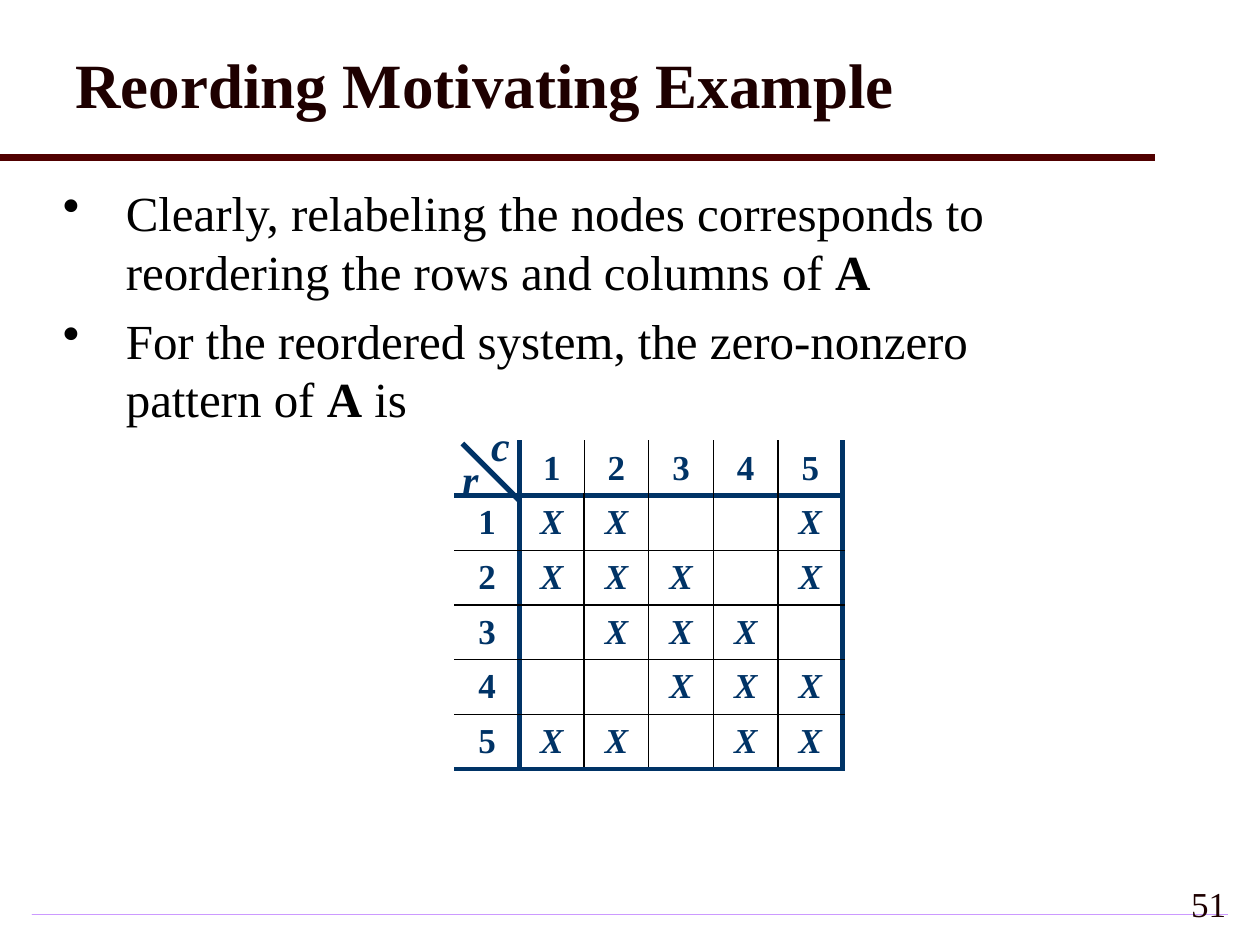
from lxml import etree
from pptx import Presentation, util as u
from pptx.dml.color import RGBColor
from pptx.enum import dml, shapes, text
from pptx.oxml.ns import qn

BLACK = RGBColor(0x00, 0x00, 0x00)
NAVY = RGBColor(0x00, 0x33, 0x66)
MAROON = RGBColor(0x50, 0x00, 0x00)
DARK = RGBColor(0x1E, 0x00, 0x00)
LILAC = RGBColor(0xCC, 0x99, 0xFF)
PALE = RGBColor(0xF3, 0xEB, 0xFF)

BULLETS = [
    [("Clearly, relabeling the nodes corresponds to reordering the rows and columns of ", False),
     ("A", True)],
    [("For the reordered system, the zero-nonzero pattern of ", False),
     ("A", True), (" is", False)],
]
PATTERN = ["XX..X", "XXX.X", ".XXX.", "..XXX", "XX.XX"]


class SlideBuilder:
    font = "Times New Roman"

    def __init__(self, slide):
        self.slide = slide

    def run(self, paragraph, words, size, color, bold=False, italic=False):
        run = paragraph.add_run()
        run.text = words
        font = run.font
        font.name, font.size = self.font, u.Pt(size)
        font.bold, font.italic = bold, italic
        font.color.rgb = color

    def frame(self, left, top, width, height, anchor=text.MSO_ANCHOR.TOP):
        box = self.slide.shapes.add_textbox(*map(u.Inches, (left, top, width, height)))
        frame = box.text_frame
        frame.word_wrap = True
        frame.vertical_anchor = anchor
        return frame

    def label(self, box, words, size, color, bold=False, italic=False,
              anchor=text.MSO_ANCHOR.TOP, align=text.PP_ALIGN.LEFT):
        paragraph = self.frame(*box, anchor).paragraphs[0]
        paragraph.alignment = align
        self.run(paragraph, words, size, color, bold, italic)

    def bullets(self, box, items, size, color):
        frame = self.frame(*box)
        for index, item in enumerate(items):
            paragraph = frame.add_paragraph() if index else frame.paragraphs[0]
            properties = paragraph._p.get_or_add_pPr()
            properties.set("marL", str(u.Inches(0.5)))
            properties.set("indent", str(-u.Inches(0.5)))
            etree.SubElement(properties, qn("a:buChar"), char="•")
            if index:
                paragraph.space_before = u.Pt(0.2 * size)
            for words, bold in item:
                self.run(paragraph, words, size, color, bold)

    def line(self, start, end, color, width):
        line = self.slide.shapes.add_connector(
            shapes.MSO_CONNECTOR.STRAIGHT, *map(u.Inches, start + end))
        line.line.color.rgb = color
        line.line.width = u.Pt(width)
        etree.SubElement(line._element.spPr, qn("a:effectLst"))

    def gradient_bar(self, box, first, last):
        bar = self.slide.shapes.add_shape(shapes.MSO_SHAPE.RECTANGLE, *map(u.Inches, box))
        bar.shadow.inherit = False
        bar.line.fill.background()
        bar.fill.gradient()
        for stop, color in zip(bar.fill.gradient_stops, (first, last)):
            stop.color.rgb = color
        # Shade from the centre outwards
        gradient = bar._element.spPr.find(qn("a:gradFill"))
        gradient.remove(gradient.find(qn("a:lin")))
        shade = etree.SubElement(gradient, qn("a:path"), path="shape")
        etree.SubElement(shade, qn("a:fillToRect"), l="50000", t="50000", r="50000", b="50000")

    def border(self, cell, side, color, width):
        properties = cell._tc.get_or_add_tcPr()
        edge = etree.Element(qn("a:ln" + side), w=str(u.Pt(width)))
        fill = etree.SubElement(edge, qn("a:solidFill"))
        etree.SubElement(fill, qn("a:srgbClr"), val=str(color))
        # Borders come before the cell fill
        properties.insert(len(properties) - 1, edge)

    def matrix(self, left, top, width, height, pattern):
        count = len(pattern) + 1
        table = self.slide.shapes.add_table(
            count, count, *map(u.Inches, (left, top, width, height))).table
        table.first_row = table.horz_banding = False
        numbers = "".join(str(number) for number in range(1, count))
        rows = ["." + numbers] + [n + marks for n, marks in zip(numbers, pattern)]
        heavy, outer = (0, count - 1), count - 1
        for i, row in enumerate(rows):
            for j, mark in enumerate(row):
                cell = table.cell(i, j)
                cell.fill.background()
                cell.vertical_anchor = text.MSO_ANCHOR.MIDDLE
                paragraph = cell.text_frame.paragraphs[0]
                paragraph.alignment = text.PP_ALIGN.CENTER
                paragraph.font.size = u.Pt(20)
                if mark != ".":
                    self.run(paragraph, mark, 20, NAVY, True, mark == "X")
                # Heavy rules close the header row, header column and matrix
                thin = (BLACK, 1 if i and j else 0.75)
                thick = (NAVY, 3)
                if j:
                    self.border(cell, "L", *(thick if j == 1 else thin))
                self.border(cell, "R", *(thick if j in heavy else thin))
                if i:
                    self.border(cell, "T", *(thick if i == 1 else thin))
                self.border(cell, "B", *(thick if i in (0, outer) else thin))


def main():
    presentation = Presentation()
    presentation.slide_width = u.Inches(10)
    presentation.slide_height = u.Inches(7.5)
    builder = SlideBuilder(presentation.slides.add_slide(presentation.slide_layouts[6]))
    middle = text.MSO_ANCHOR.MIDDLE

    # Footer rule, title rule and page number
    builder.gradient_bar((0.25, 7.25, 9.5, 0.01), LILAC, PALE)
    builder.line((0, 1.25), (9.17, 1.25), MAROON, 4)
    builder.label((7.75, 6.92, 2.08, 0.5), "51", 20, DARK,
                  anchor=middle, align=text.PP_ALIGN.RIGHT)

    # Body text
    builder.bullets((0.4, 1.4, 8.52, 2.08), BULLETS, 28, BLACK)

    # Zero-nonzero matrix with its row and column corner
    builder.matrix(3.61, 3.5, 3.08, 2.6, PATTERN)
    for letter, left, top in (("r", 3.57, 3.55), ("c", 3.8, 3.28)):
        builder.label((left, top, 0.21, 0.5), letter, 24, NAVY, True, True)
    builder.line((4.12, 3.97), (3.67, 3.52), NAVY, 3)

    # Title
    builder.label((0.5, 0.31, 9, 0.71), "Reording Motivating Example", 36, DARK, True,
                  anchor=middle)

    presentation.save("out.pptx")


if __name__ == "__main__":
    main()
